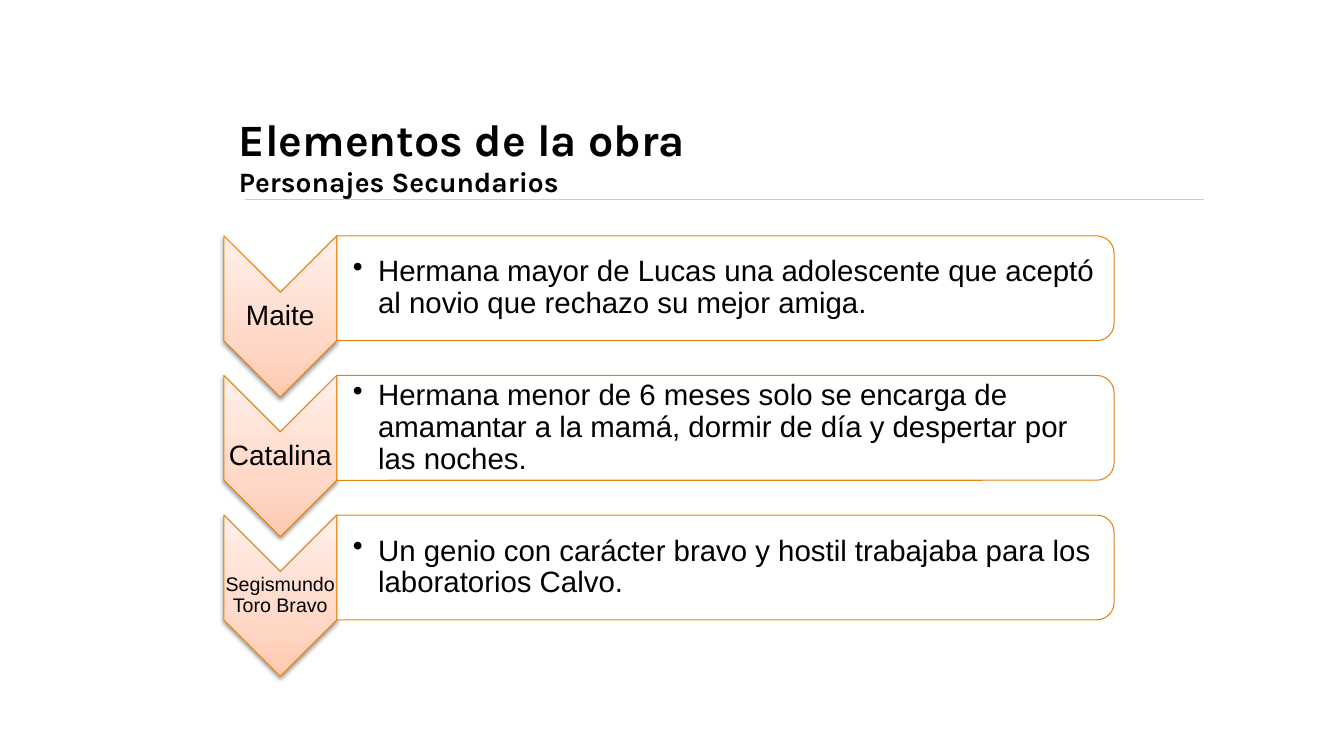
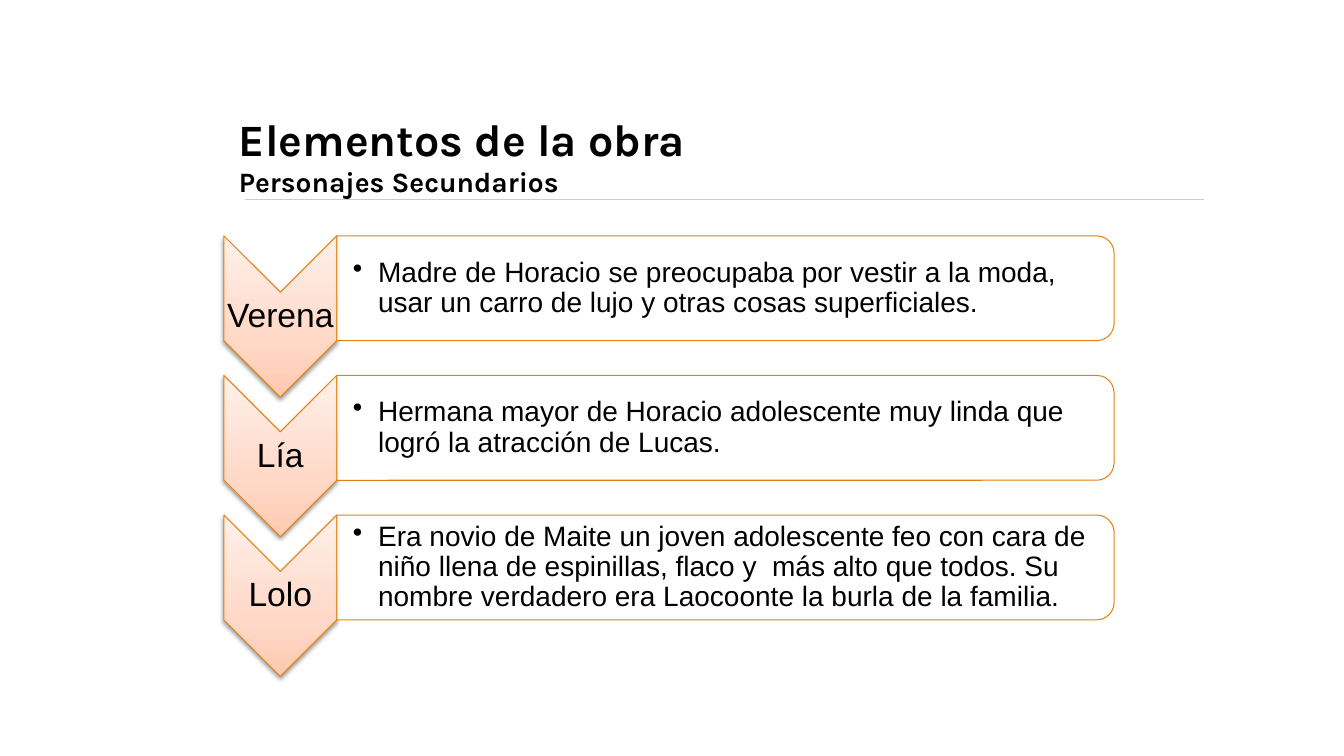
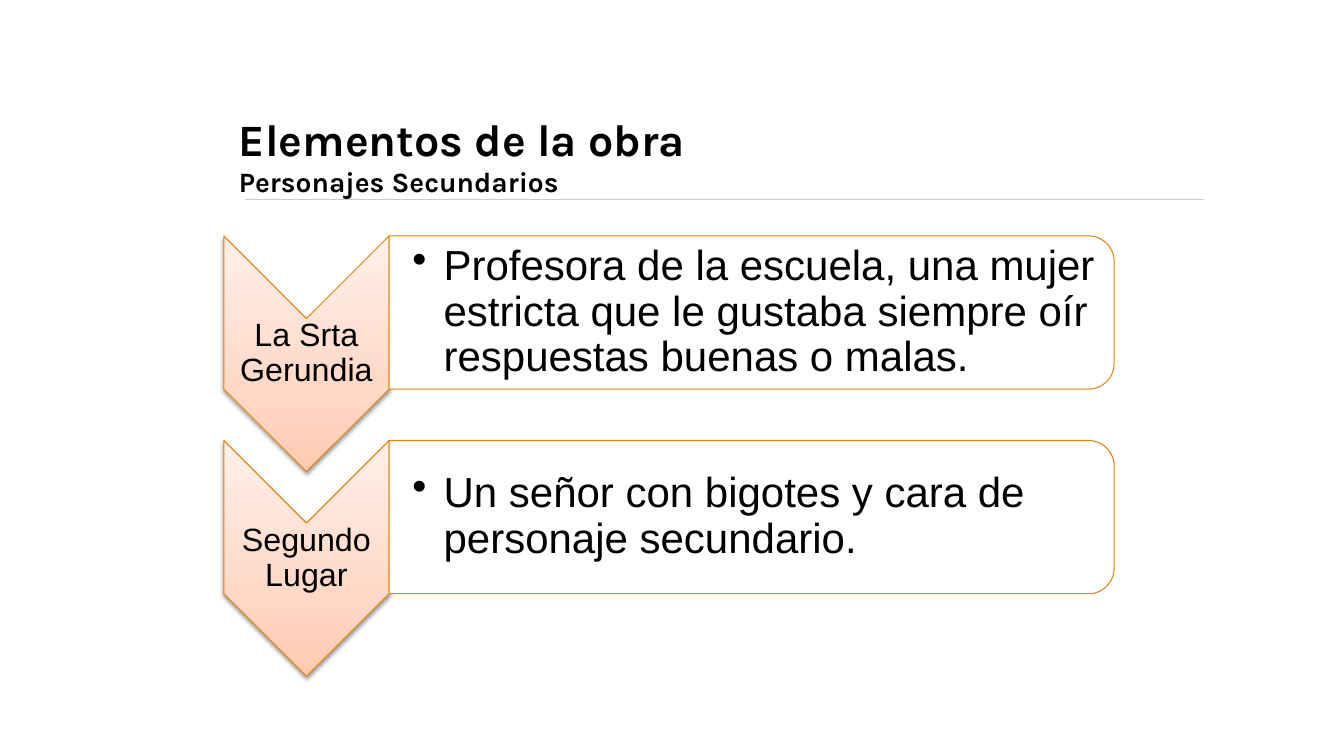
"""Build three slides that present the secondary characters of a novel."""
from dataclasses import dataclass

from lxml import etree
from pptx import Presentation
from pptx.dml.color import RGBColor
from pptx.enum.shapes import MSO_CONNECTOR, MSO_SHAPE
from pptx.enum.text import MSO_ANCHOR, PP_ALIGN
from pptx.oxml import parse_xml
from pptx.oxml.ns import nsdecls, qn
from pptx.util import Inches, Pt

STRAIGHT = MSO_CONNECTOR.STRAIGHT
CHEVRON = MSO_SHAPE.CHEVRON
PANEL = MSO_SHAPE.ROUND_2_SAME_RECTANGLE
MIDDLE = MSO_ANCHOR.MIDDLE
BOTTOM = MSO_ANCHOR.BOTTOM
LEFT = PP_ALIGN.LEFT
CENTER = PP_ALIGN.CENTER


@dataclass(frozen=True)
class Theme:
    """Colours, fonts and type sizes shared by the slides."""

    text: str = "000000"
    rule: str = "CCCCCC"
    outline: str = "E48312"
    panel: str = "FFFFFF"
    panel_opacity: int = 90
    gradient: tuple = ((0, "FFC9B0"), (35, "FFD8C7"), (100, "FFF0EA"))
    title_font: str = "Karla"
    body_font: str = "Arial"
    title_size: int = 32
    subtitle_size: int = 20
    line_width: float = 0.75
    line_spacing: float = 0.9


@dataclass(frozen=True)
class ListStyle:
    """Measures of one chevron list, in inches and points."""

    chevron_width: float
    chevron_length: float
    panel_height: float
    text_margin: float
    text_inset: float
    indent: float
    name_size: int
    description_size: int


THEME = Theme()
LIST_LEFT, LIST_TOP, LIST_RIGHT, LIST_BOTTOM = 2.22, 2.34, 11.05, 6.71
THREE_ROWS = ListStyle(1.12, 1.6, 1.04, 0.05, 0.16, 0.25, 20, 21)
THREE_ROWS_LARGE_NAMES = ListStyle(1.12, 1.6, 1.04, 0.05, 0.16, 0.25, 24, 20)
TWO_ROWS = ListStyle(1.64, 2.34, 1.52, 0.08, 0.23, 0.31, 23, 30)
SMALL_NAME_SIZE = 14

SLIDES = (
    (THREE_ROWS, (
        ("Maite", "Hermana mayor de Lucas una adolescente que aceptó al novio "
                  "que rechazo su mejor amiga."),
        ("Catalina", "Hermana menor de 6 meses solo se encarga de amamantar a la "
                     "mamá, dormir de día y despertar por las noches."),
        ("Segismundo Toro Bravo", "Un genio con carácter bravo y hostil trabajaba "
                                  "para los laboratorios Calvo."),
    )),
    (THREE_ROWS_LARGE_NAMES, (
        ("Verena", "Madre de Horacio se preocupaba por vestir a la moda, usar un "
                   "carro de lujo y otras cosas superficiales."),
        ("Lía", "Hermana mayor de Horacio adolescente muy linda que logró la "
                "atracción de Lucas."),
        ("Lolo", "Era novio de Maite un joven adolescente feo con cara de niño "
                 "llena de espinillas, flaco y  más alto que todos. Su nombre "
                 "verdadero era Laocoonte la burla de la familia."),
    )),
    (TWO_ROWS, (
        ("La Srta Gerundia", "Profesora de la escuela, una mujer estricta que le "
                             "gustaba siempre oír respuestas buenas o malas."),
        ("Segundo Lugar", "Un señor con bigotes y cara de personaje secundario."),
    )),
)


def style_line(line, color):
    """Give a line its colour and the common width."""
    line.color.rgb = RGBColor.from_string(color)
    line.width = Pt(THEME.line_width)


def style_run(run, font_name, size, bold=False):
    """Format one run of text."""
    run.font.name = font_name
    run.font.size = Pt(size)
    run.font.bold = bold
    run.font.color.rgb = RGBColor.from_string(THEME.text)


def add_text(slide, box, text, anchor, insets):
    """Add a wrapping text box and return its first paragraph."""
    frame = slide.shapes.add_textbox(*map(Inches, box)).text_frame
    frame.word_wrap = True
    frame.vertical_anchor = anchor
    (frame.margin_left, frame.margin_top,
     frame.margin_right, frame.margin_bottom) = map(Inches, insets)
    frame.text = text
    return frame.paragraphs[0]


def add_heading(slide):
    """Add the rule, title and subtitle that every slide shares."""
    rule = slide.shapes.add_connector(
        STRAIGHT, Inches(2.43), Inches(1.98), Inches(11.94), Inches(1.98))
    style_line(rule.line, THEME.rule)
    etree.SubElement(rule._element.spPr, qn("a:effectLst"))
    paragraph = add_text(slide, (2.27, 1.05, 9.65, 1.02),
                         "Elementos de la obra\vPersonajes Secundarios",
                         BOTTOM, (0.1, 0.1, 0.1, 0.1))
    paragraph.alignment = LEFT
    for run, size in zip(paragraph.runs, (THEME.title_size, THEME.subtitle_size)):
        style_run(run, THEME.title_font, size, bold=True)


def add_turned_shape(slide, kind, left, top, width, height):
    """Add a shape turned a quarter so that it covers the given area."""
    shape = slide.shapes.add_shape(
        kind, Inches(left + (width - height) / 2), Inches(top + (height - width) / 2),
        Inches(height), Inches(width))
    shape.rotation = 90
    shape.shadow.inherit = False
    style_line(shape.line, THEME.outline)
    return shape


def add_chevron(slide, left, top, width, length):
    """Add a downward chevron with a gradient and a soft shadow."""
    chevron = add_turned_shape(slide, CHEVRON, left, top, width, length)
    stops = "".join(
        f'<a:gs pos="{position * 1000}"><a:srgbClr val="{color}"/></a:gs>'
        for position, color in THEME.gradient)
    properties = chevron._element.spPr
    properties.find(qn("a:prstGeom")).addnext(parse_xml(
        f'<a:gradFill {nsdecls("a")} rotWithShape="0"><a:gsLst>{stops}</a:gsLst>'
        '<a:lin ang="16200000" scaled="0"/></a:gradFill>'))
    properties.find(qn("a:effectLst")).append(parse_xml(
        f'<a:outerShdw {nsdecls("a")} blurRad="40000" dist="20000" dir="5400000" '
        'rotWithShape="0"><a:srgbClr val="000000"><a:alpha val="38000"/>'
        '</a:srgbClr></a:outerShdw>'))


def add_panel(slide, left, top, width, height):
    """Add a translucent panel rounded on its right side."""
    panel = add_turned_shape(slide, PANEL, left, top, width, height)
    panel.fill.solid()
    panel.fill.fore_color.rgb = RGBColor.from_string(THEME.panel)
    color = panel._element.spPr.find(qn("a:solidFill")).find(qn("a:srgbClr"))
    etree.SubElement(color, qn("a:alpha"), val=str(THEME.panel_opacity * 1000))


def add_name(slide, box, name, size):
    """Add a centred character name."""
    paragraph = add_text(slide, box, name, MIDDLE, (0.01, 0.01, 0.01, 0.01))
    paragraph.alignment = CENTER
    paragraph.line_spacing = THEME.line_spacing
    style_run(paragraph.runs[0], THEME.body_font, size)


def add_description(slide, box, description, style):
    """Add a bulleted character description."""
    paragraph = add_text(slide, box, description, MIDDLE,
                         (style.text_inset, 0.01, 0.01, 0.01))
    properties = paragraph._p.get_or_add_pPr()
    properties.set("marL", str(Inches(style.indent)))
    properties.set("indent", str(-Inches(style.indent)))
    etree.SubElement(properties, qn("a:buChar"), char="•")
    paragraph.alignment = LEFT
    paragraph.line_spacing = THEME.line_spacing
    style_run(paragraph.runs[0], THEME.body_font, style.description_size)


def add_character(slide, top, name, description, style):
    """Add one row: chevron, name, panel and description."""
    width, length = style.chevron_width, style.chevron_length
    add_chevron(slide, LIST_LEFT, top, width, length)
    name_size = SMALL_NAME_SIZE if len(name.split()) > 2 and style is THREE_ROWS \
        else style.name_size
    add_name(slide, (LIST_LEFT, top + width / 2, width, length - width),
             name, name_size)
    panel_left = LIST_LEFT + width
    panel_width = LIST_RIGHT - panel_left
    add_panel(slide, panel_left, top, panel_width, style.panel_height)
    margin = style.text_margin
    add_description(slide, (panel_left, top + margin, panel_width - margin,
                            style.panel_height - 2 * margin), description, style)


def add_character_list(slide, characters, style):
    """Spread the rows evenly over the height of the list."""
    pitch = (LIST_BOTTOM - LIST_TOP - style.chevron_length) / (len(characters) - 1)
    for index, (name, description) in enumerate(characters):
        add_character(slide, LIST_TOP + index * pitch, name, description, style)


def main():
    """Build and save the presentation."""
    presentation = Presentation()
    presentation.slide_width = Inches(13.33)
    presentation.slide_height = Inches(7.5)
    for style, characters in SLIDES:
        slide = presentation.slides.add_slide(presentation.slide_layouts[6])
        add_heading(slide)
        add_character_list(slide, characters, style)
    presentation.save("out.pptx")


if __name__ == "__main__":
    main()
